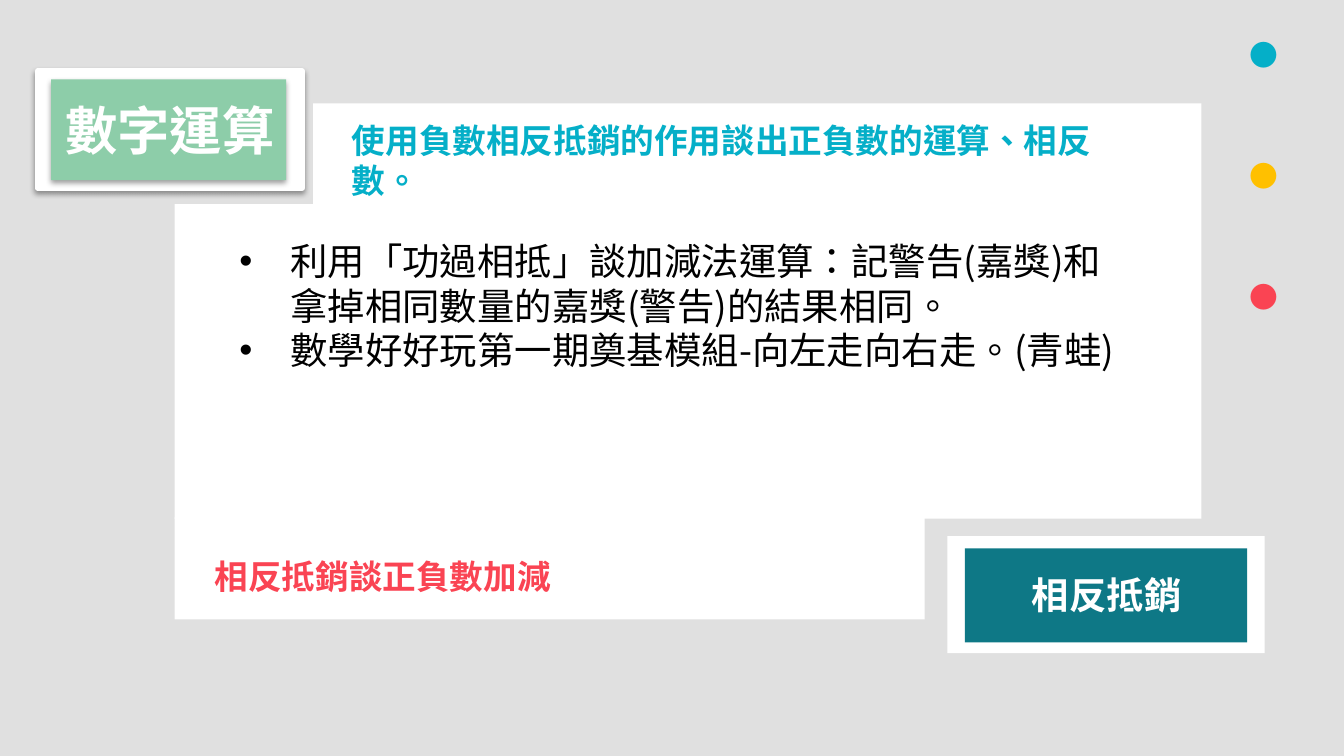
from lxml.etree import SubElement
from pptx import Presentation
from pptx.dml.color import RGBColor
from pptx.enum.shapes import MSO_SHAPE
from pptx.enum.text import MSO_ANCHOR, MSO_AUTO_SIZE, PP_ALIGN
from pptx.oxml.ns import qn
from pptx.util import Inches, Pt

COLORS = {
    "background": "E0E0E0",
    "white": "FFFFFF",
    "black": "000000",
    "cyan": "05AFC8",
    "yellow": "FFC000",
    "red": "FA4453",
    "green": "8DCDA9",
    "teal": "0E7886",
}


class SlideBuilder:
    font_name = "Noto Sans CJK SC"
    language = "zh-TW"

    def __init__(self, page):
        self.page = page
        fill = page.background.fill
        fill.solid()
        fill.fore_color.rgb = self.color("background")

    def color(self, name):
        return RGBColor.from_string(COLORS[name])

    def panel(self, left, top, width, height, color, border=0, shadow=False):
        box = self.page.shapes.add_shape(
            MSO_SHAPE.RECTANGLE, Inches(left), Inches(top), Inches(width), Inches(height))
        box.shadow.inherit = False
        box.fill.solid()
        box.fill.fore_color.rgb = self.color(color)
        if border:
            box.line.color.rgb = self.color(color)
            box.line.width = Pt(border)
        else:
            box.line.fill.background()
        if shadow:
            self.drop_shadow(box)

    def drop_shadow(self, box):
        effects = box._element.spPr.find(qn("a:effectLst"))
        outer = SubElement(effects, qn("a:outerShdw"), blurRad=str(Pt(3.1)),
                           dist=str(Pt(1.6)), dir="5400000", algn="t", rotWithShape="0")
        tint = SubElement(outer, qn("a:srgbClr"), val=COLORS["black"])
        SubElement(tint, qn("a:alpha"), val="38000")

    def style(self, paragraph, size, bold, align, color=None):
        paragraph.alignment = align
        paragraph.space_before = Pt(0)
        paragraph._p.get_or_add_pPr().set("hangingPunct", "0")
        font = paragraph.font
        font.name = self.font_name
        font.size = Pt(size)
        font.bold = bold
        if color:
            font.color.rgb = self.color(color)
        SubElement(font._element, qn("a:ea"), typeface=self.font_name)
        for span in paragraph.runs:
            self.set_language(span)

    def set_language(self, span):
        span._r.get_or_add_rPr().set("lang", self.language)

    def text(self, left, top, width, height, lines, size, color=None, bold=True,
             align=PP_ALIGN.LEFT, wrap=True, holder=None):
        area = [Inches(length) for length in (left, top, width, height)]
        if holder is None:
            box = self.page.shapes.add_textbox(*area)
        else:
            box = holder
            box.left, box.top, box.width, box.height = area
            self.page.shapes._spTree.append(box._element)
        frame = box.text_frame
        frame.word_wrap = wrap
        frame.auto_size = MSO_AUTO_SIZE.NONE
        frame.vertical_anchor = MSO_ANCHOR.TOP
        frame.text = "\n".join(lines)
        for paragraph in frame.paragraphs:
            self.style(paragraph, size, bold, align, color)
        return frame

    def bullets(self, *area, lines, size, color, holder):
        frame = self.text(*area, lines, size, color, bold=False, holder=holder)
        for paragraph in frame.paragraphs:
            properties = paragraph._p.get_or_add_pPr()
            properties.set("marL", str(Inches(0.52)))
            properties.set("indent", str(Inches(-0.38)))

    def dots(self, *area, colors, size):
        paragraph = self.text(*area, [""], size, align=PP_ALIGN.RIGHT).paragraphs[0]
        for number, color in enumerate(colors, 1):
            span = paragraph.add_run()
            span.text = "·" if number == len(colors) else "· "
            span.font.color.rgb = self.color(color)
            self.set_language(span)


def main():
    deck = Presentation()
    deck.slide_width = Inches(10)
    deck.slide_height = deck.slide_width * 9 // 16
    page = deck.slides.add_slide(deck.slide_layouts[1])
    title, body = page.placeholders
    builder = SlideBuilder(page)

    builder.dots(8.23, -0.1, 1.65, 1.01, colors=("cyan", "yellow", "red"), size=54)

    builder.panel(0.28, 0.53, 1.97, 0.87, "white", border=3, shadow=True)
    builder.panel(0.38, 0.59, 1.75, 0.75, "green", shadow=True)
    builder.panel(7.05, 3.99, 2.36, 0.87, "white")
    builder.panel(7.18, 4.08, 2.1, 0.7, "teal")
    builder.panel(1.3, 1.52, 7.64, 2.34, "white")
    builder.panel(2.33, 0.77, 6.61, 0.75, "white")
    builder.panel(1.3, 3.85, 5.58, 0.76, "white")

    builder.text(7.28, 4.21, 1.91, 0.44, ["相反抵銷"], 20, "white", align=PP_ALIGN.CENTER)
    builder.text(0.35, 0.68, 1.83, 0.57, ["數字運算"], 28, "white",
                 align=PP_ALIGN.CENTER, holder=title)
    builder.text(2.52, 0.84, 6.04, 0.4,
                 ["使用負數相反抵銷的作用談出正負數的運算、相反數。"], 18, "cyan")
    builder.bullets(1.54, 1.72, 6.85, 1.11, lines=[
        "利用「功過相抵」談加減法運算：記警告(嘉獎)和拿掉相同數量的嘉獎(警告)的結果相同。",
        "數學好好玩第一期奠基模組-向左走向右走。(青蛙)",
    ], size=20, color="black", holder=body)
    builder.text(1.5, 4.09, 2.73, 0.4, ["相反抵銷談正負數加減"], 18, "red", wrap=False)

    deck.save("out.pptx")


if __name__ == "__main__":
    main()
